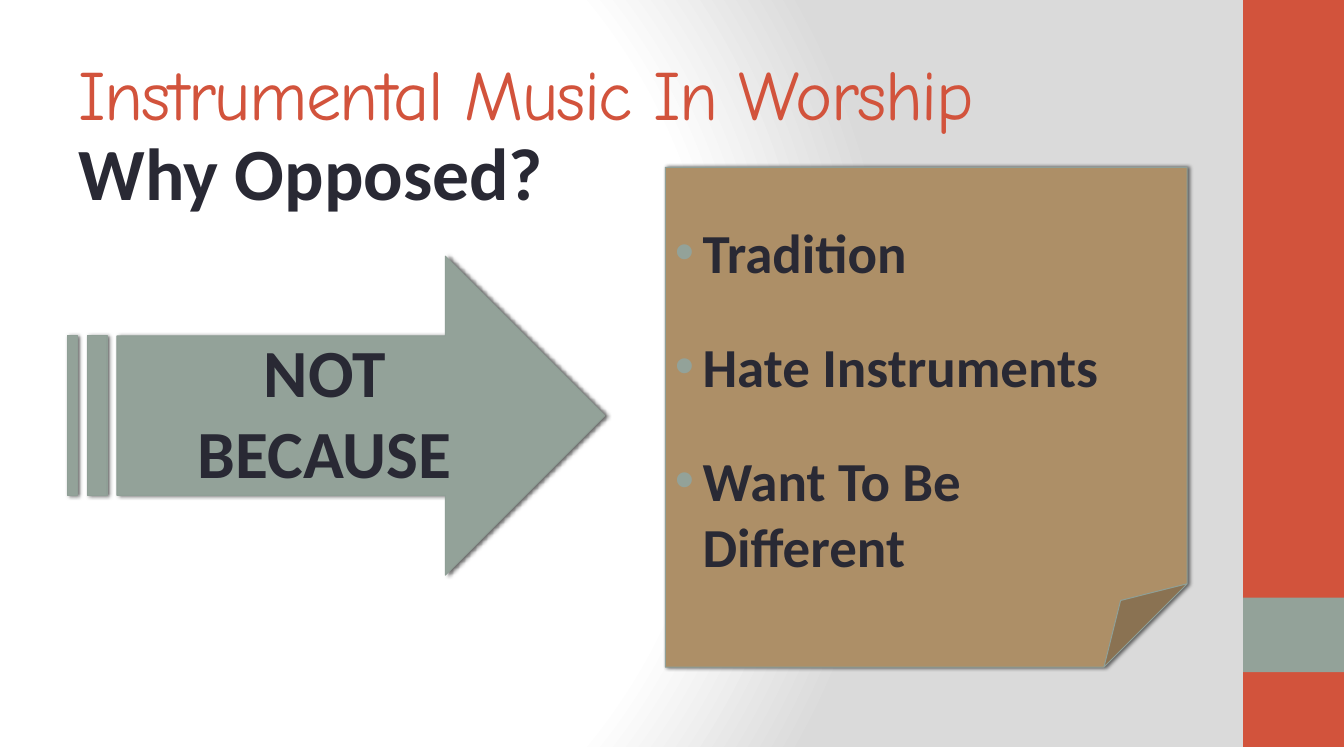
"""Build the slide on why instrumental music in worship is opposed."""
from dataclasses import dataclass
from typing import Optional

import pptx
import pptx.dml.color
import pptx.enum.shapes
import pptx.enum.text
import pptx.oxml
import pptx.oxml.ns
import pptx.util

RGBColor = pptx.dml.color.RGBColor
Preset = pptx.enum.shapes.MSO_SHAPE
Align = pptx.enum.text.PP_ALIGN
Anchor = pptx.enum.text.MSO_ANCHOR

RED = RGBColor(0xD2, 0x53, 0x3C)
SAGE = RGBColor(0x93, 0xA2, 0x99)
SAGE_EDGE = RGBColor(0x8F, 0x9F, 0x96)
TAN = RGBColor(0xAD, 0x8F, 0x67)
INK = RGBColor(0x29, 0x29, 0x34)
WHITE = RGBColor(0xFF, 0xFF, 0xFF)
GREY = RGBColor(0xDA, 0xDA, 0xDA)

EMU_PER_PX = 9144
SLIDE_WIDTH, SLIDE_HEIGHT = 1800, 1000


@dataclass(frozen=True)
class Box:
    """A rectangle in px, one hundredth of an inch each."""

    left: int
    top: int
    width: int
    height: int

    def emu(self) -> tuple:
        """Return the four lengths in EMU."""
        return tuple(px(n) for n in (self.left, self.top, self.width, self.height))


@dataclass(frozen=True)
class Panel:
    """A filled preset shape, optionally raised with an edge and a shadow."""

    preset: Preset
    box: Box
    fill: RGBColor
    raised: bool = False


PANELS = [
    Panel(Preset.RECTANGLE, Box(1665, 0, 135, SLIDE_HEIGHT), RED),
    Panel(Preset.RECTANGLE, Box(1665, 800, 135, 100), SAGE),
    Panel(Preset.FOLDED_CORNER, Box(891, 224, 699, 669), TAN, True),
    Panel(Preset.STRIPED_RIGHT_ARROW, Box(90, 343, 720, 427), SAGE, True),
]


def px(length: int) -> int:
    """Convert px to EMU."""
    return length * EMU_PER_PX


def make_element(tag: str, content: str = "", attributes: str = ""):
    """Make one DrawingML element."""
    namespace = pptx.oxml.ns.nsdecls("a")
    return pptx.oxml.parse_xml(f"<a:{tag} {namespace} {attributes}>{content}</a:{tag}>")


def paint_background(slide) -> None:
    """Fill the background with a radial gradient from white to grey."""
    slide.background.fill.solid()
    stops = "".join(
        f'<a:gs pos="{position * 1000}"><a:srgbClr val="{color}"/></a:gs>'
        for position, color in ((0, WHITE), (75, WHITE), (100, GREY))
    )
    gradient = make_element(
        "gradFill",
        f'<a:gsLst>{stops}</a:gsLst><a:path path="circle">'
        '<a:fillToRect l="20000" t="50000" r="100000" b="50000"/></a:path>',
        'rotWithShape="1"',
    )
    solid = slide.element.find(".//" + pptx.oxml.ns.qn("a:solidFill"))
    solid.getparent().replace(solid, gradient)


def add_panel(slide, panel: Panel) -> None:
    """Draw one panel."""
    shape = slide.shapes.add_shape(panel.preset, *panel.box.emu())
    shape.shadow.inherit = False
    shape.fill.solid()
    shape.fill.fore_color.rgb = panel.fill
    if not panel.raised:
        shape.line.fill.background()
        return
    shape.line.color.rgb = SAGE_EDGE
    shape.line.width = pptx.util.Pt(1)
    effects = shape.element.spPr.find(pptx.oxml.ns.qn("a:effectLst"))
    effects.append(make_element(
        "outerShdw",
        '<a:srgbClr val="000000"><a:alpha val="60000"/></a:srgbClr>',
        'blurRad="50800" dist="25400" dir="0" rotWithShape="0"',
    ))


def add_bullet(paragraph, color: RGBColor) -> None:
    """Give a paragraph a hanging round bullet."""
    properties = paragraph._p.get_or_add_pPr()
    properties.set("marL", str(px(56)))
    properties.set("indent", str(px(-37)))
    properties.append(make_element("buClr", f'<a:srgbClr val="{color}"/>'))
    properties.append(make_element("buFont", attributes='typeface="Arial"'))
    properties.append(make_element("buChar", attributes='char="•"'))


def add_text(slide, text: str, box: Box, *, size: int, font: str = "Calibri",
             color: RGBColor = INK, bold: bool = True, align: Align = Align.LEFT,
             anchor: Anchor = Anchor.TOP, tracking: float = 0, gap: int = 0,
             bullet: Optional[RGBColor] = None) -> None:
    """Add a text box with one paragraph for each line of text."""
    frame = slide.shapes.add_textbox(*box.emu()).text_frame
    frame.word_wrap = True
    frame.vertical_anchor = anchor
    frame.margin_left = frame.margin_right = px(15)
    frame.margin_top = frame.margin_bottom = px(7)
    frame.text = text
    for index, paragraph in enumerate(frame.paragraphs):
        if bullet is not None:
            add_bullet(paragraph, bullet)
        paragraph.alignment = align
        if index and gap:
            paragraph.space_before = pptx.util.Pt(gap)
        for run in paragraph.runs:
            run.font.name = font
            run.font.size = pptx.util.Pt(size)
            run.font.bold = bold
            run.font.color.rgb = color
            if tracking:
                run._r.get_or_add_rPr().set("spc", str(round(tracking * 100)))


def main() -> None:
    """Build and save the presentation."""
    presentation = pptx.Presentation()
    presentation.slide_width = px(SLIDE_WIDTH)
    presentation.slide_height = px(SLIDE_HEIGHT)
    slide = presentation.slides.add_slide(presentation.slide_layouts[6])
    paint_background(slide)
    for panel in PANELS:
        add_panel(slide, panel)
    add_text(slide, "Instrumental Music In Worship", Box(90, 40, 1500, 167), size=68,
             font="Comic Neue", color=RED, bold=False, anchor=Anchor.MIDDLE, tracking=-1.5)
    add_text(slide, "Tradition\nHate Instruments\nWant To Be Different",
             Box(870, 286, 720, 607), size=53, gap=46, bullet=SAGE)
    add_text(slide, "NOT\nBECAUSE", Box(181, 435, 508, 234), size=65, align=Align.CENTER)
    add_text(slide, "Why Opposed?", Box(90, 163, 820, 134), size=71)
    presentation.save("out.pptx")


if __name__ == "__main__":
    main()
